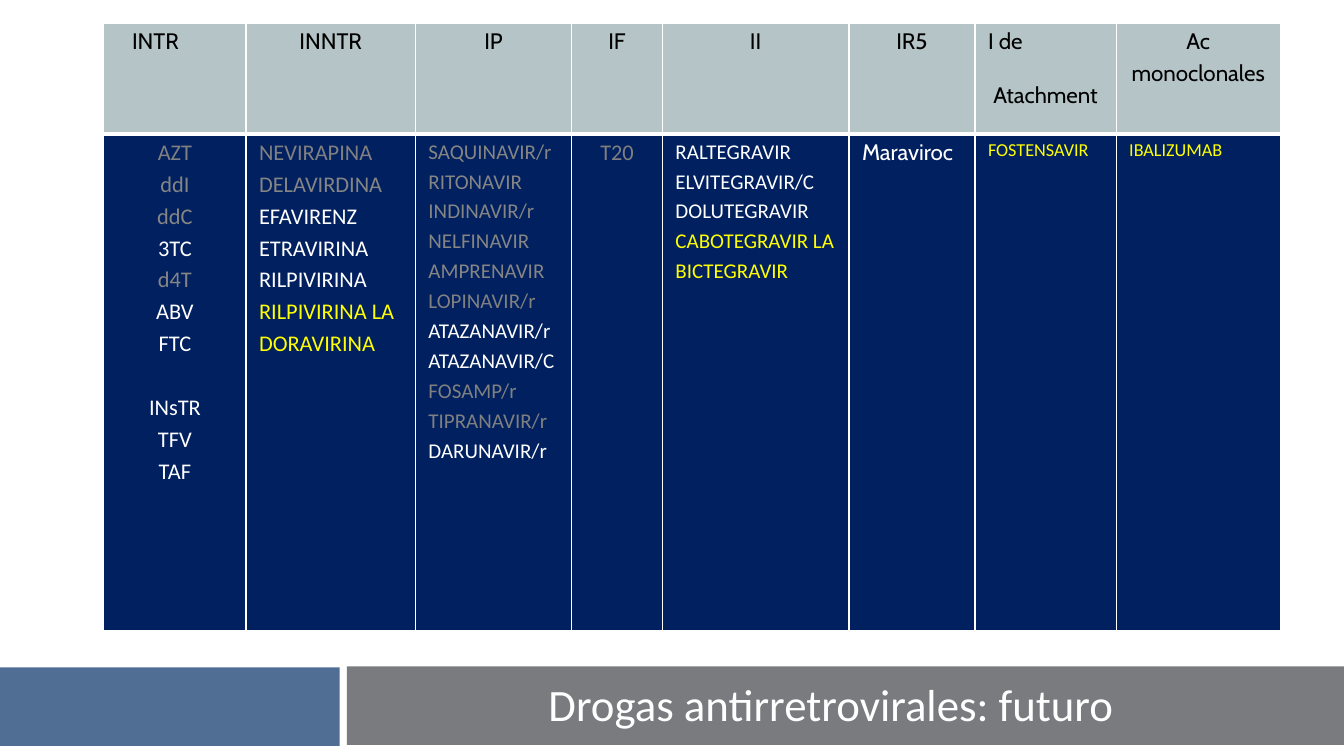
"""Builds the slide of antiretroviral drugs by class."""

from dataclasses import dataclass

from lxml.etree import SubElement
from pptx import Presentation
from pptx.dml.color import RGBColor
from pptx.enum.shapes import MSO_SHAPE
from pptx.enum.text import MSO_ANCHOR, MSO_AUTO_SIZE, PP_ALIGN
from pptx.oxml.ns import qn
from pptx.util import Inches, Pt


@dataclass(frozen=True)
class Theme:
    """Colours, fonts and type sizes."""
    white: str = "FFFFFF"
    black: str = "000000"
    grey: str = "808080"
    ash: str = "858584"
    yellow: str = "FFFF00"
    navy: str = "002060"
    mist: str = "B5C4C7"
    blue: str = "506E94"
    slate: str = "797B7E"
    head: str = "Cabin"
    body: str = "Calibri"
    title: int = 32
    large: int = 16
    mid: int = 15
    small: int = 13


@dataclass(frozen=True)
class Line:
    """One line of a cell; gap is the space before it in points."""
    text: str
    tone: str
    align: PP_ALIGN = PP_ALIGN.LEFT
    gap: float | None = None
    indent: float = 0


@dataclass(frozen=True)
class Drugs:
    """One column: a drug class and its drugs."""
    width: float
    head: list[Line]
    drugs: list[Line]
    size: int
    font: str


@dataclass(frozen=True)
class Band:
    """A filled strip at the foot of the slide."""
    left: float
    top: float
    width: float
    fill: str


T = Theme()
MID = PP_ALIGN.CENTER


def lines(*groups: tuple[str, str], align: PP_ALIGN = PP_ALIGN.LEFT) -> list[Line]:
    """Turn groups of a colour and comma-parted names into lines."""
    return [Line(name, tone, align) for tone, names in groups for name in names.split(", ")]


def top(names: str) -> list[Line]:
    """Return centred heading lines."""
    return lines((T.black, names), align=MID)


INTR = lines((T.grey, "AZT"), (T.ash, "ddI, ddC"), (T.white, "3TC"),
             (T.ash, "d4T"), (T.white, "ABV, FTC"), align=MID)
INTR += [Line("INsTR", T.white, MID, gap=26)] + lines((T.white, "TFV, TAF"), align=MID)
INNTR = lines((T.grey, "NEVIRAPINA"), (T.ash, "DELAVIRDINA"),
              (T.white, "EFAVIRENZ, ETRAVIRINA, RILPIVIRINA"),
              (T.yellow, "RILPIVIRINA LA, DORAVIRINA"))
IP = lines((T.ash, "SAQUINAVIR/r, RITONAVIR, INDINAVIR/r, NELFINAVIR, AMPRENAVIR"),
           (T.grey, "LOPINAVIR/r"), (T.white, "ATAZANAVIR/r, ATAZANAVIR/C"),
           (T.grey, "FOSAMP/r, TIPRANAVIR/r"), (T.white, "DARUNAVIR/r"))
II = lines((T.white, "RALTEGRAVIR, ELVITEGRAVIR/C, DOLUTEGRAVIR"),
           (T.yellow, "CABOTEGRAVIR LA, BICTEGRAVIR"))

COLUMNS = [
    Drugs(1.41, [Line("INTR", T.black, indent=0.15)], INTR, T.large, T.body),
    Drugs(1.68, top("INNTR"), INNTR, T.large, T.body),
    Drugs(1.55, top("IP"), IP, T.mid, T.body),
    Drugs(0.9, top("IF"), lines((T.grey, "T20"), align=MID), T.large, T.body),
    Drugs(1.85, top("II"), II, T.mid, T.body),
    Drugs(1.25, top("IR5"), lines((T.white, "Maraviroc")), T.large, T.head),
    Drugs(1.4, [Line("I de", T.black), Line("Atachment", T.black, MID, gap=19)],
          lines((T.yellow, "FOSTENSAVIR")), T.small, T.body),
    Drugs(1.63, top("Ac, monoclonales"), lines((T.yellow, "IBALIZUMAB")), T.small, T.body),
]
HEIGHTS = [1.1, 4.93]
BANDS = [Band(3.44, 6.61, 9.89, T.slate), Band(0, 6.62, 3.37, T.blue)]


def style(para, font: str, size: int, tone: str) -> None:
    """Set the font of a paragraph."""
    para.font.name = font
    para.font.size = Pt(size)
    para.font.color.rgb = RGBColor.from_string(tone)


def edge(cell, thick: str) -> None:
    """Draw white cell borders, with one thick side."""
    props = cell._tc.get_or_add_tcPr()
    for side in ("lnL", "lnR", "lnT", "lnB"):
        width = Pt(3 if side == thick else 1)
        rule = SubElement(props, qn(f"a:{side}"), w=str(width))
        fill = SubElement(rule, qn("a:solidFill"))
        SubElement(fill, qn("a:srgbClr"), val=T.white)


def write(cell, rows: list[Line], font: str, size: int, fill: str, thick: str) -> None:
    """Fill a cell with lines of text."""
    edge(cell, thick)
    cell.fill.solid()
    cell.fill.fore_color.rgb = RGBColor.from_string(fill)
    cell.margin_left = cell.margin_right = Inches(0.13)
    cell.margin_top = cell.margin_bottom = Inches(0.05)
    cell.vertical_anchor = MSO_ANCHOR.TOP
    frame = cell.text_frame
    for i, row in enumerate(rows):
        para = frame.add_paragraph() if i else frame.paragraphs[0]
        para.text = row.text
        para.alignment = row.align
        if i:
            para.space_before = Pt(0.2 * size if row.gap is None else row.gap)
        if row.indent:
            para._p.get_or_add_pPr().set("marL", str(Inches(row.indent)))
        style(para, font, size, row.tone)


def add_band(slide, band: Band) -> None:
    """Draw a strip."""
    shape = slide.shapes.add_shape(MSO_SHAPE.RECTANGLE, Inches(band.left), Inches(band.top),
                                   Inches(band.width), Inches(0.78))
    shape.shadow.inherit = False
    shape.fill.solid()
    shape.fill.fore_color.rgb = RGBColor.from_string(band.fill)
    shape.line.fill.background()


def add_grid(slide) -> None:
    """Draw the table of drug classes."""
    width = sum(col.width for col in COLUMNS)
    table = slide.shapes.add_table(len(HEIGHTS), len(COLUMNS), Inches(1.03), Inches(0.23),
                                   Inches(width), Inches(sum(HEIGHTS))).table
    table.first_row = table.horz_banding = False
    for row, height in zip(table.rows, HEIGHTS):
        row.height = Inches(height)
    for i, col in enumerate(COLUMNS):
        table.columns[i].width = Inches(col.width)
        write(table.cell(0, i), col.head, T.head, T.large, T.mist, "lnB")
        write(table.cell(1, i), col.drugs, col.font, col.size, T.navy, "lnT")


def set_title(slide) -> None:
    """Place the title in front of its strip."""
    title = slide.shapes.title
    title.left, title.top = Inches(5.31), Inches(6.64)
    title.width, title.height = Inches(5.93), Inches(0.67)
    frame = title.text_frame
    frame.text = "Drogas antirretrovirales: futuro"
    frame.word_wrap = False
    frame.auto_size = MSO_AUTO_SIZE.SHAPE_TO_FIT_TEXT
    frame.vertical_anchor = MSO_ANCHOR.TOP
    frame.margin_left = frame.margin_right = Inches(0.13)
    frame.margin_top = frame.margin_bottom = Inches(0.07)
    para = frame.paragraphs[0]
    para.alignment = PP_ALIGN.LEFT
    style(para, T.body, T.title, T.white)
    slide.shapes._spTree.append(title._element)


def main() -> None:
    """Build and save the slide."""
    deck = Presentation()
    deck.slide_width, deck.slide_height = Inches(13.33), Inches(7.5)
    slide = deck.slides.add_slide(deck.slide_layouts[5])
    for band in BANDS:
        add_band(slide, band)
    add_grid(slide)
    set_title(slide)
    deck.save("out.pptx")


if __name__ == "__main__":
    main()
